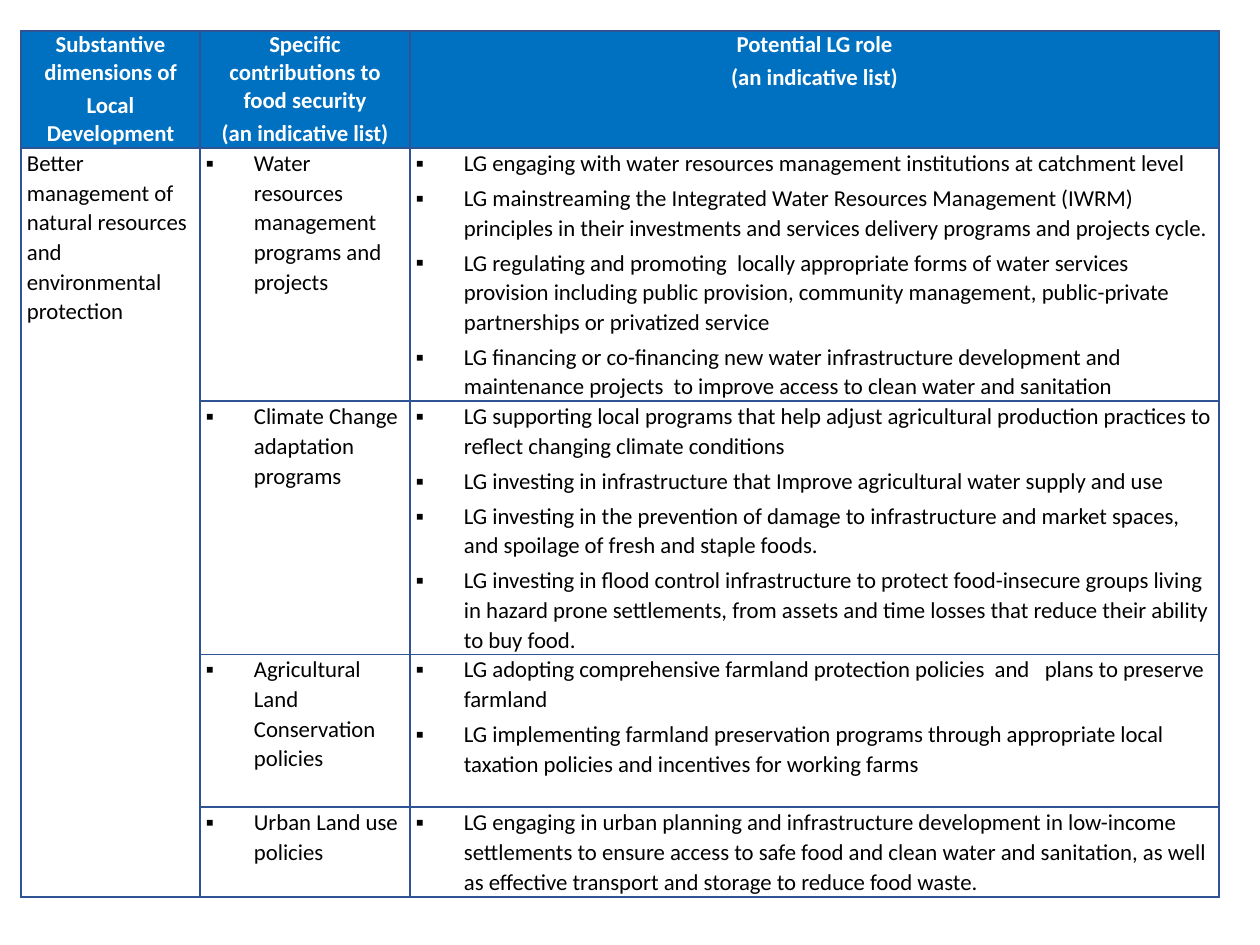
import lxml.etree
import pptx
import pptx.dml.color
import pptx.enum.text
import pptx.oxml.ns
import pptx.util

EMU_PER_PX = 914400 / 126
COLUMN_WIDTHS = [179, 210, 809]
ROW_HEIGHTS = [117, 253, 253, 153, 90]

HEADERS = [
    ["Substantive dimensions of", "Local Development"],
    ["Specific contributions to food security", "(an indicative list)"],
    ["Potential LG role", "(an indicative list)"],
]
DIMENSION = "Better management of natural resources and environmental protection"
CONTRIBUTIONS = [
    ("Water resources management programs and projects", [
        "LG engaging with water resources management institutions at catchment level",
        "LG mainstreaming the Integrated Water Resources Management (IWRM) principles "
        "in their investments and services delivery programs and projects cycle.",
        "LG regulating and promoting  locally appropriate forms of water services "
        "provision including public provision, community management, public-private "
        "partnerships or privatized service",
        "LG financing or co-financing new water infrastructure development and "
        "maintenance projects  to improve access to clean water and sanitation",
    ]),
    ("Climate Change adaptation programs", [
        "LG supporting local programs that help adjust agricultural production "
        "practices to reflect changing climate conditions",
        "LG investing in infrastructure that Improve agricultural water supply and use",
        "LG investing in the prevention of damage to infrastructure and market spaces, "
        "and spoilage of fresh and staple foods.",
        "LG investing in flood control infrastructure to protect food-insecure groups "
        "living in hazard prone settlements, from assets and time losses that reduce "
        "their ability to buy food.",
    ]),
    ("Agricultural Land Conservation policies", [
        "LG adopting comprehensive farmland protection policies  and   plans to "
        "preserve farmland",
        "LG implementing farmland preservation programs through appropriate local "
        "taxation policies and incentives for working farms",
    ]),
    ("Urban Land use policies", [
        "LG engaging in urban planning and infrastructure development in low-income "
        "settlements to ensure access to safe food and clean water and sanitation, as "
        "well as effective transport and storage to reduce food waste.",
    ]),
]


def px(length):
    return pptx.util.Emu(round(length * EMU_PER_PX))


def rgb(color):
    return pptx.dml.color.RGBColor.from_string(color)


def add_child(parent, tag, **attributes):
    return lxml.etree.SubElement(parent, pptx.oxml.ns.qn(tag), attributes)


class TableSlide:
    font_name = "Calibri"
    font_size = 13
    text_color = "000000"
    header_text_color = "FFFFFF"
    header_fill = "0070C0"
    border_color = "2F5496"
    border_width = 1
    bullet_indent = 48
    side_margin = 6

    def __init__(self, presentation):
        self.slide = presentation.slides.add_slide(presentation.slide_layouts[6])

    def add_table(self, left, top, column_widths, row_heights):
        frame = self.slide.shapes.add_table(
            len(row_heights), len(column_widths), px(left), px(top),
            px(sum(column_widths)), px(sum(row_heights)))
        table = frame.table
        for column, width in zip(table.columns, column_widths):
            column.width = px(width)
        for row, height in zip(table.rows, row_heights):
            row.height = px(height)
        for cell in table.iter_cells():
            self.style_cell(cell)
        return table

    def style_cell(self, cell):
        cell.margin_left = cell.margin_right = px(self.side_margin)
        cell.margin_top = cell.margin_bottom = 0
        properties = cell._tc.get_or_add_tcPr()
        width = str(pptx.util.Pt(self.border_width))
        for side in "LRTB":
            line = add_child(properties, f"a:ln{side}", w=width)
            fill = add_child(line, "a:solidFill")
            add_child(fill, "a:srgbClr", val=self.border_color)
        cell.fill.background()

    def write_paragraphs(self, cell, texts, **text_format):
        frame = cell.text_frame
        for index, text in enumerate(texts):
            paragraph = frame.add_paragraph() if index else frame.paragraphs[0]
            if index:
                paragraph.space_before = pptx.util.Pt(1)
            paragraph.space_after = pptx.util.Pt(2)
            self.write_text(paragraph, text, **text_format)

    def write_text(self, paragraph, text, color=text_color, bold=False,
                   align=pptx.enum.text.PP_ALIGN.LEFT, line_spacing=1.07, bullet=False):
        paragraph.alignment = align
        paragraph.line_spacing = line_spacing
        if bullet:
            self.add_bullet(paragraph)
        run = paragraph.add_run()
        run.text = text
        run.font.name = self.font_name
        run.font.size = pptx.util.Pt(self.font_size)
        run.font.bold = bold
        run.font.color.rgb = rgb(color)

    def add_bullet(self, paragraph):
        properties = paragraph._p.get_or_add_pPr()
        indent = px(self.bullet_indent)
        properties.set("marL", str(indent))
        properties.set("indent", str(-indent))
        add_child(properties, "a:buFont", typeface=self.font_name)
        add_child(properties, "a:buChar", char="▪")

    def write_header(self, cell, texts):
        cell.fill.solid()
        cell.fill.fore_color.rgb = rgb(self.header_fill)
        self.write_paragraphs(cell, texts, color=self.header_text_color, bold=True,
                              align=pptx.enum.text.PP_ALIGN.CENTER, line_spacing=1.0)


def main():
    presentation = pptx.Presentation()
    presentation.slide_width = pptx.util.Inches(10)
    presentation.slide_height = pptx.util.Inches(7.5)

    page = TableSlide(presentation)
    table = page.add_table(21, 31, COLUMN_WIDTHS, ROW_HEIGHTS)
    for column, texts in enumerate(HEADERS):
        page.write_header(table.cell(0, column), texts)

    table.cell(1, 0).merge(table.cell(len(CONTRIBUTIONS), 0))
    page.write_paragraphs(table.cell(1, 0), [DIMENSION])
    for row, (contribution, roles) in enumerate(CONTRIBUTIONS, start=1):
        page.write_paragraphs(table.cell(row, 1), [contribution], bullet=True)
        page.write_paragraphs(table.cell(row, 2), roles, bullet=True)

    presentation.save("out.pptx")


if __name__ == "__main__":
    main()
